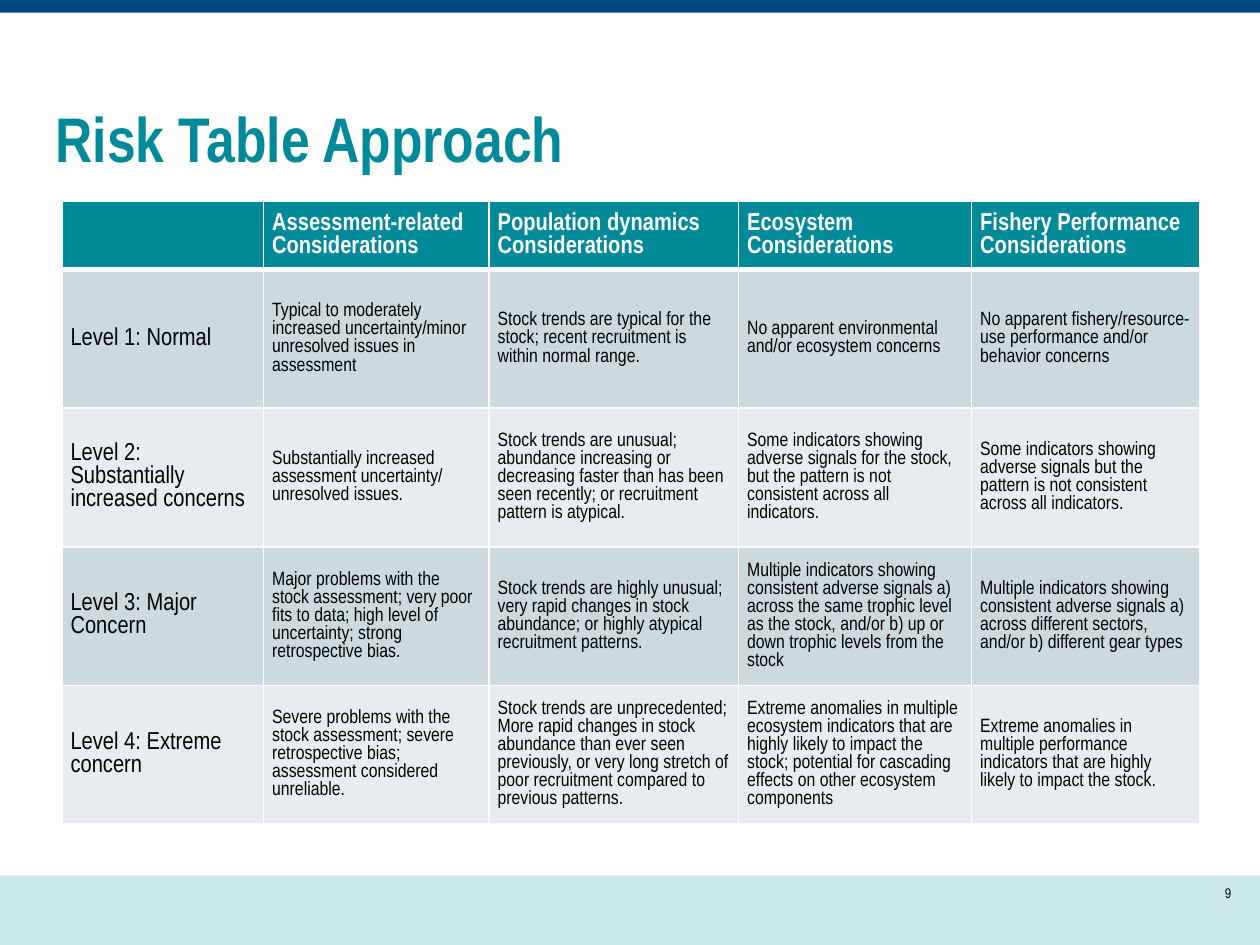
import pptx
import pptx.util
import pptx.dml.color
import pptx.enum.shapes
import pptx.enum.text
import pptx.oxml
import pptx.oxml.ns

Inches = pptx.util.Inches
Pt = pptx.util.Pt
Anchor = pptx.enum.text.MSO_ANCHOR
Align = pptx.enum.text.PP_ALIGN

COLORS = {
    "teal": "008998",
    "navy": "00467F",
    "footer": "CCE7EA",
    "band_dark": "CCDADD",
    "band_light": "E7EDEF",
    "white": "FFFFFF",
    "black": "000000",
}

HEADINGS = [
    "",
    "Assessment-related Considerations",
    "Population dynamics Considerations",
    "Ecosystem Considerations",
    "Fishery Performance Considerations",
]
LEVELS = [
    ["Level 1: Normal",
     "Typical to moderately increased uncertainty/minor unresolved issues in assessment",
     "Stock trends are typical for the stock; recent recruitment is within normal range.",
     "No apparent environmental and/or ecosystem concerns",
     "No apparent fishery/resource-use performance and/or behavior concerns"],
    ["Level 2: Substantially increased concerns",
     "Substantially increased assessment uncertainty/ unresolved issues.",
     "Stock trends are unusual; abundance increasing or decreasing faster than has been "
     "seen recently; or recruitment pattern is atypical.",
     "Some indicators showing adverse signals for the stock, but the pattern is not "
     "consistent across all indicators.",
     "Some indicators showing adverse signals but the pattern is not consistent across "
     "all indicators."],
    ["Level 3: Major Concern",
     "Major problems with the stock assessment; very poor fits to data; high level of "
     "uncertainty; strong retrospective bias.",
     "Stock trends are highly unusual; very rapid changes in stock abundance; or highly "
     "atypical recruitment patterns.",
     "Multiple indicators showing consistent adverse signals a) across the same trophic "
     "level as the stock, and/or b) up or down trophic levels from the stock",
     "Multiple indicators showing consistent adverse signals a) across different sectors, "
     "and/or b) different gear types"],
    ["Level 4: Extreme concern",
     "Severe problems with the stock assessment; severe retrospective bias; assessment "
     "considered unreliable.",
     "Stock trends are unprecedented; More rapid changes in stock abundance than ever seen "
     "previously, or very long stretch of poor recruitment compared to previous patterns.",
     "Extreme anomalies in multiple ecosystem indicators that are highly likely to impact "
     "the stock; potential for cascading effects on other ecosystem components",
     "Extreme anomalies in multiple performance indicators that are highly likely to "
     "impact the stock."],
]


def rgb(name):
    return pptx.dml.color.RGBColor.from_string(COLORS[name])


class SlideBuilder:
    """Holds the slide and its style, with one method per kind of element."""

    font_name = "Arial Narrow"

    def __init__(self, slide):
        self.slide = slide

    def style(self, paragraph, size, color, bold=False, align=Align.LEFT):
        paragraph.alignment = align
        font = paragraph.font
        font.name, font.size, font.bold = self.font_name, Pt(size), bold
        font.color.rgb = rgb(color)

    def frame(self, text_frame, text, anchor):
        text_frame.text = text
        text_frame.word_wrap = True
        text_frame.auto_size = pptx.enum.text.MSO_AUTO_SIZE.NONE
        text_frame.vertical_anchor = anchor
        text_frame.margin_left = text_frame.margin_right = Inches(0.1)
        text_frame.margin_top = text_frame.margin_bottom = Inches(0.1)
        return text_frame.paragraphs[0]

    def band(self, top, height, color):
        band = self.slide.shapes.add_shape(
            pptx.enum.shapes.MSO_SHAPE.RECTANGLE,
            Inches(0), Inches(top), Inches(10), Inches(height))
        band.shadow.inherit = False
        band.fill.solid()
        band.fill.fore_color.rgb = rgb(color)
        band.line.fill.background()

    def title(self, text, left, top, width, height):
        title = self.slide.shapes.title
        title.left, title.top = Inches(left), Inches(top)
        title.width, title.height = Inches(width), Inches(height)
        heading = self.frame(title.text_frame, text, Anchor.BOTTOM)
        self.style(heading, 36, "teal", bold=True)

    def page_number(self, text, left, top, width, height):
        box = self.slide.shapes.add_textbox(
            Inches(left), Inches(top), Inches(width), Inches(height))
        number = self.frame(box.text_frame, text, Anchor.MIDDLE)
        self.style(number, 8, "black", align=Align.RIGHT)

    def borders(self, cell, top, bottom):
        properties = cell._tc.get_or_add_tcPr()
        for side, width in (("L", 1), ("R", 1), ("T", top), ("B", bottom)):
            properties.append(pptx.oxml.parse_xml(
                f'<a:ln{side} {pptx.oxml.ns.nsdecls("a")} w="{Pt(width)}"><a:solidFill>'
                f'<a:srgbClr val="{COLORS["white"]}"/></a:solidFill></a:ln{side}>'))

    def cell(self, cell, text, fill, size, color, bold, top, bottom):
        self.borders(cell, top, bottom)
        cell.fill.solid()
        cell.fill.fore_color.rgb = rgb(fill)
        cell.vertical_anchor = Anchor.MIDDLE
        cell.margin_left = cell.margin_right = Inches(0.07)
        cell.margin_top = cell.margin_bottom = 0
        cell.text = text
        self.style(cell.text_frame.paragraphs[0], size, color, bold)

    def table(self, rows, left, top, widths, heights):
        table = self.slide.shapes.add_table(
            len(rows), len(widths), Inches(left), Inches(top),
            Inches(sum(widths)), Inches(sum(heights))).table
        for column, width in zip(table.columns, widths):
            column.width = Inches(width)
        for row, height in zip(table.rows, heights):
            row.height = Inches(height)
        for r, texts in enumerate(rows):
            header = r == 0
            fill = "teal" if header else ("band_light", "band_dark")[r % 2]
            for c, text in enumerate(texts):
                self.cell(table.cell(r, c), text, fill,
                          size=14 if header or c == 0 else 11,
                          color="white" if header else "black", bold=header,
                          top=3 if r == 1 else 1, bottom=3 if header else 1)


def main():
    deck = pptx.Presentation()
    deck.slide_width, deck.slide_height = Inches(10), Inches(7.5)
    builder = SlideBuilder(deck.slides.add_slide(deck.slide_layouts[5]))

    # Footer and header bands
    builder.band(6.95, 0.55, "footer")
    builder.band(0, 0.1, "navy")

    # Title and page number
    builder.title("Risk Table Approach", 0.34, 0.65, 9.32, 0.84)
    builder.page_number("9", 9.27, 6.8, 0.6, 0.57)

    # Risk levels by consideration
    builder.table([HEADINGS] + LEVELS, 0.49, 1.6,
                  widths=[1.6, 1.79, 1.98, 1.85, 1.81],
                  heights=[0.54] + [1.1] * len(LEVELS))

    deck.save("out.pptx")


if __name__ == "__main__":
    main()
